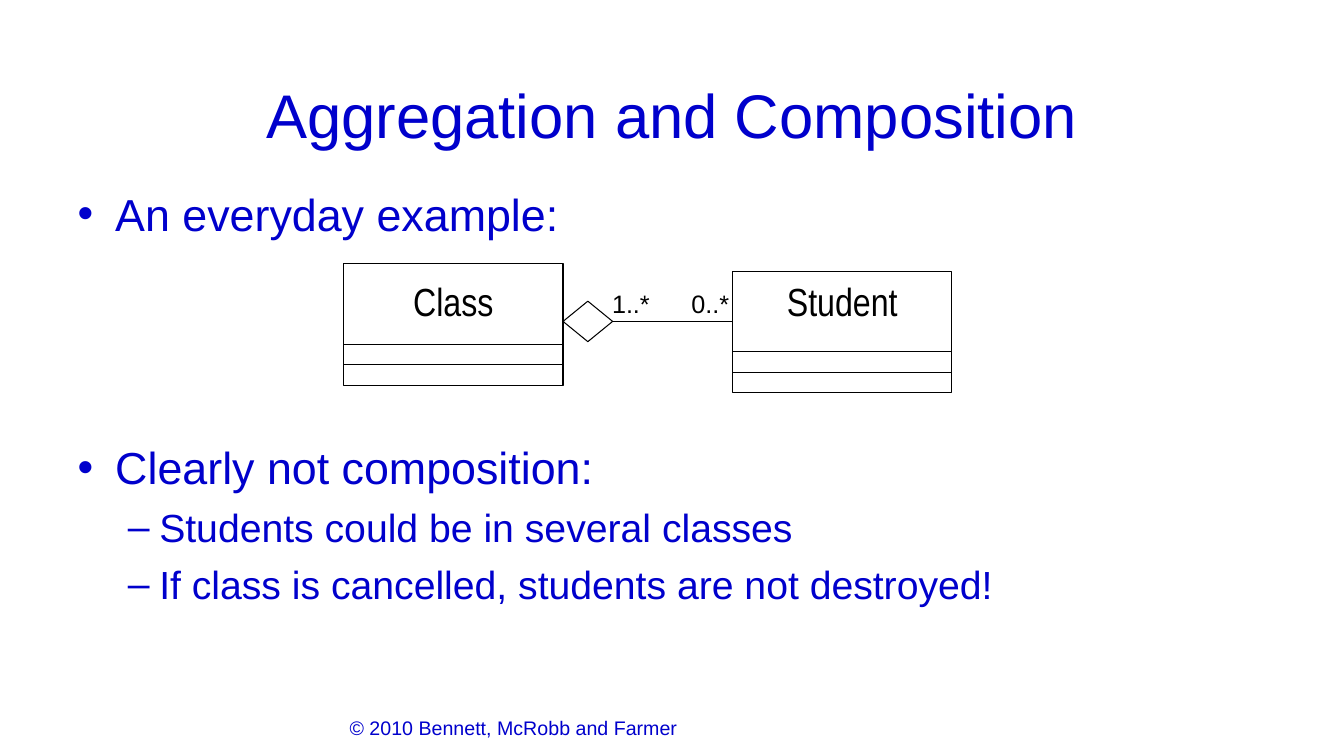
import pptx
import pptx.util
import pptx.dml.color
import pptx.enum.shapes
import pptx.enum.text
import pptx.oxml
import pptx.oxml.ns

Cm, Pt = pptx.util.Cm, pptx.util.Pt
ALIGN = pptx.enum.text.PP_ALIGN
ANCHOR = pptx.enum.text.MSO_ANCHOR
SHAPE = pptx.enum.shapes.MSO_SHAPE

COLORS = {"text": "0000CC", "diagram": "000000"}

TITLE = "Aggregation and Composition"
# level, text, space before in points (the large one leaves room for the diagram)
POINTS = [
    (0, "An everyday example:", 0),
    (0, "Clearly not composition:", 142.5),
    (1, "Students could be in several classes", 7),
    (1, "If class is cancelled, students are not destroyed!", 7),
]
# bullet, text size in points, left margin and hanging indent in cm
LEVELS = [("•", 32, 0.95, 0.95), ("–", 28, 2.06, 0.79)]
COPYRIGHT = "© 2010 Bennett, McRobb and Farmer"

# name, left and top in cm
CLASSES = [("Class", 8.66, 6.65), ("Student", 18.46, 6.84)]
CLASS_W, CLASS_H, ROW_H = 5.53, 3.06, 0.52
NAME_TOP, NAME_H = 6.98, 1.19
DIAMOND_W, DIAMOND_H, LINK_Y = 1.25, 1.02, 8.1
# text, left in cm
MULTIPLICITIES = [("1..*", 15.42), ("0..*", 17.42)]
MULTIPLICITY_TOP, MULTIPLICITY_W, MULTIPLICITY_H = 7.26, 0.96, 0.76


def rgb(name):
    return pptx.dml.color.RGBColor.from_string(COLORS[name])


def place(item, left, top, width, height):
    item.left, item.top, item.width, item.height = map(Cm, (left, top, width, height))


def write(paragraph, text, size, color="text", font="Arial"):
    run = paragraph.add_run()
    run.text = text
    run.font.size = Pt(size)
    run.font.name = font
    run.font.color.rgb = rgb(color)


def set_bullet(paragraph, char, margin, hanging):
    properties = paragraph._p.get_or_add_pPr()
    properties.set("marL", str(Cm(margin)))
    properties.set("indent", str(-Cm(hanging)))
    bullet = pptx.oxml.parse_xml(
        f'<a:buChar {pptx.oxml.ns.nsdecls("a")} char="{char}"/>')
    properties.append(bullet)


def add_label(slide, text, box, size, font="Arial", wrap=True):
    """Add centred diagram text without inner margins."""
    label = slide.shapes.add_textbox(*map(Cm, box))
    frame = label.text_frame
    frame.margin_left = frame.margin_right = frame.margin_top = frame.margin_bottom = 0
    frame.word_wrap = wrap
    frame.paragraphs[0].alignment = ALIGN.CENTER
    write(frame.paragraphs[0], text, size, "diagram", font)


def add_outline(slide, kind, *box):
    outline = slide.shapes.add_shape(kind, *map(Cm, box))
    outline.shadow.inherit = False
    outline.fill.background()
    outline.line.color.rgb = rgb("diagram")
    outline.line.width = Pt(0.75)
    return outline


def add_horizontal(slide, left, right, y):
    line = slide.shapes.add_connector(
        pptx.enum.shapes.MSO_CONNECTOR.STRAIGHT, Cm(left), Cm(y), Cm(right), Cm(y))
    line.line.color.rgb = rgb("diagram")
    line.line.width = Pt(0.75)
    line._element.spPr.append(
        pptx.oxml.parse_xml(f'<a:effectLst {pptx.oxml.ns.nsdecls("a")}/>'))
    return line


def add_class(slide, name, left, top):
    add_outline(slide, SHAPE.RECTANGLE, left, top, CLASS_W, CLASS_H)
    for rows in (2, 1):
        add_horizontal(slide, left, left + CLASS_W, top + CLASS_H - rows * ROW_H)
    add_label(slide, name, (left, NAME_TOP, CLASS_W, NAME_H), 28, "Arial Narrow")


def add_aggregation(slide):
    whole_right = CLASSES[0][1] + CLASS_W
    part_left = CLASSES[1][1]
    diamond = add_outline(slide, SHAPE.DIAMOND, whole_right, LINK_Y - DIAMOND_H / 2,
                          DIAMOND_W, DIAMOND_H)
    association = add_horizontal(slide, whole_right + DIAMOND_W, part_left, LINK_Y)
    association.begin_connect(diamond, 3)
    for text, left in MULTIPLICITIES:
        add_label(slide, text, (left, MULTIPLICITY_TOP, MULTIPLICITY_W, MULTIPLICITY_H),
                  18, wrap=False)


def fill_title(title):
    place(title, 1.7, 0.76, 30.48, 3.18)
    title.text_frame.vertical_anchor = ANCHOR.BOTTOM
    heading = title.text_frame.paragraphs[0]
    heading.alignment = ALIGN.CENTER
    write(heading, TITLE, 44)


def fill_body(body):
    place(body, 1.7, 4.57, 30.48, 12.45)
    frame = body.text_frame
    frame.auto_size = pptx.enum.text.MSO_AUTO_SIZE.NONE
    for number, (level, text, space) in enumerate(POINTS):
        point = frame.add_paragraph() if number else frame.paragraphs[0]
        char, size, margin, hanging = LEVELS[level]
        point.level = level
        set_bullet(point, char, margin, hanging)
        point.space_before = Pt(space)
        write(point, text, size)


def main():
    deck = pptx.Presentation()
    deck.slide_width, deck.slide_height = Cm(33.87), Cm(19.05)
    slide = deck.slides.add_slide(deck.slide_layouts[1])
    fill_title(slide.shapes.title)
    fill_body(slide.placeholders[1])
    for name, left, top in CLASSES:
        add_class(slide, name, left, top)
    add_aggregation(slide)
    footer = slide.shapes.add_textbox(Cm(8.56), Cm(17.92), Cm(15.49), Cm(0.85))
    footer.text_frame.word_wrap = True
    write(footer.text_frame.paragraphs[0], COPYRIGHT, 14)
    deck.save("out.pptx")


if __name__ == "__main__":
    main()
